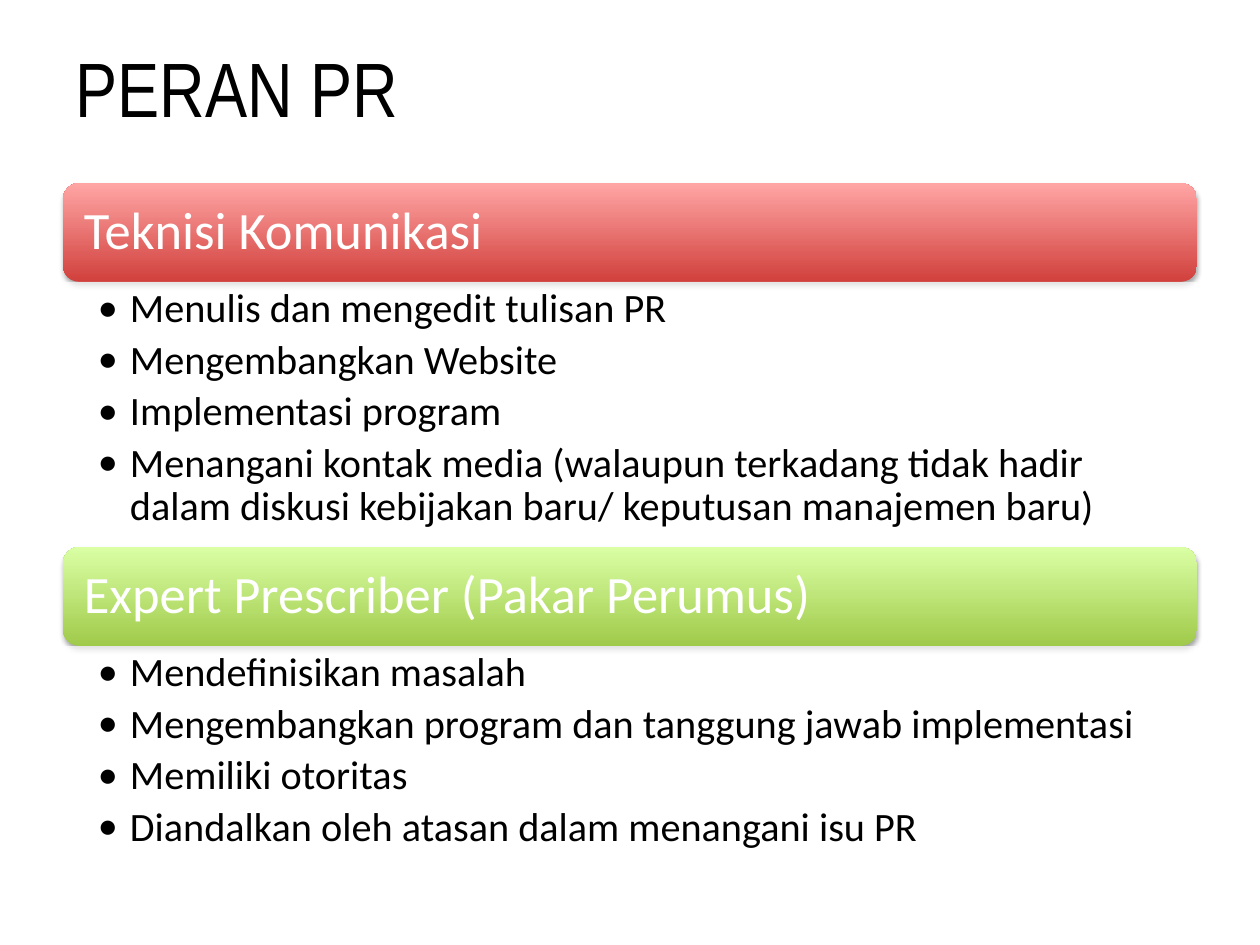
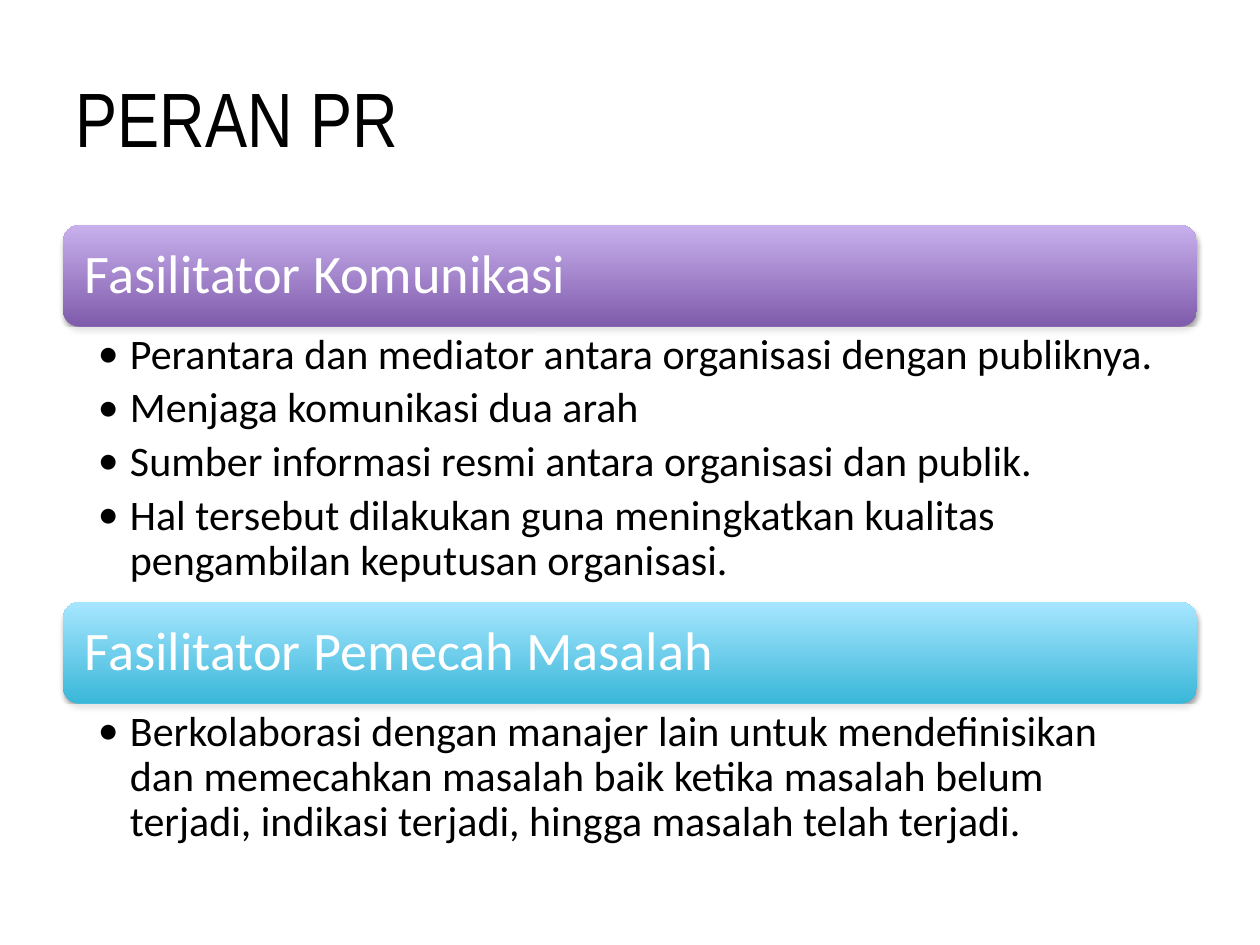
from dataclasses import dataclass

import pptx
import pptx.dml.color
import pptx.enum.shapes
import pptx.enum.text
import pptx.oxml
import pptx.oxml.ns
import pptx.util

PX_PER_INCH = 126
LEFT, WIDTH = 63, 1134
TITLE_HEIGHT = 158
HANGING_INDENT = 32


@dataclass(frozen=True)
class Theme:
    title_font: str = "Arial Narrow"
    body_font: str = "Calibri"
    title_size: int = 44
    text: str = "000000"
    heading_text: str = "FFFFFF"
    panel: str = "FFFFFF"
    red: tuple = ("D1403C", "FFA6A5")
    green: tuple = ("A0CA4A", "DAFFA5")
    purple: tuple = ("7F5BAB", "C8B0ED")
    cyan: tuple = ("39B7D8", "A7E6FF")
    line_spacing: float = 0.9
    bullet_gap: float = 0.2


THEME = Theme()


@dataclass(frozen=True)
class ListStyle:
    """Sizes of the headings and bullet lists on one slide."""
    heading_size: int
    bullet_size: int
    heading_height: int
    heading_inset: int
    bullet_right_inset: int


@dataclass(frozen=True)
class Role:
    name: str
    gradient: tuple
    list_height: int
    duties: tuple


def px(length):
    return pptx.util.Emu(round(length * 914400 / PX_PER_INCH))


def rgb(colour):
    return pptx.dml.color.RGBColor.from_string(colour)


def xml(markup):
    """Parse one element, given as markup with a {ns} slot for its namespace."""
    return pptx.oxml.parse_xml(markup.format(ns=pptx.oxml.ns.nsdecls("a")))


def place(shape, left, top, width, height):
    shape.left, shape.top = px(left), px(top)
    shape.width, shape.height = px(width), px(height)


def add_block(slide, preset, top, height, text, insets, anchor):
    """Add a full-width shape without outline that holds wrapped text."""
    block = slide.shapes.add_shape(preset, px(LEFT), px(top), px(WIDTH), px(height))
    block.line.fill.background()
    text_frame = block.text_frame
    text_frame.text = text
    text_frame.word_wrap = True
    text_frame.vertical_anchor = anchor
    left, upper, right, lower = map(px, insets)
    text_frame.margin_left, text_frame.margin_top = left, upper
    text_frame.margin_right, text_frame.margin_bottom = right, lower
    for paragraph in text_frame.paragraphs:
        paragraph.alignment = pptx.enum.text.PP_ALIGN.LEFT
        paragraph.line_spacing = THEME.line_spacing
    return block


def format_runs(paragraph, font_name, size, colour):
    for run in paragraph.runs:
        run.font.name = font_name
        run.font.size = pptx.util.Pt(size)
        run.font.color.rgb = rgb(colour)


def set_title(slide, text, top):
    title = slide.shapes.title
    place(title, LEFT, top, WIDTH, TITLE_HEIGHT)
    text_frame = title.text_frame
    text_frame.text = text
    text_frame.auto_size = pptx.enum.text.MSO_AUTO_SIZE.NONE
    text_frame.vertical_anchor = pptx.enum.text.MSO_ANCHOR.MIDDLE
    paragraph = text_frame.paragraphs[0]
    paragraph.alignment = pptx.enum.text.PP_ALIGN.LEFT
    format_runs(paragraph, THEME.title_font, THEME.title_size, THEME.text)


def add_soft_shadow(shape):
    shape._element.spPr.append(xml(
        '<a:effectLst {ns}>'
        '<a:outerShdw blurRad="40000" dist="23000" dir="5400000" rotWithShape="0">'
        '<a:srgbClr val="000000"><a:alpha val="35000"/></a:srgbClr>'
        '</a:outerShdw></a:effectLst>'))


def add_heading(slide, role, top, style):
    bar = add_block(slide, pptx.enum.shapes.MSO_SHAPE.ROUNDED_RECTANGLE,
                    top, style.heading_height, role.name,
                    [style.heading_inset] * 4, pptx.enum.text.MSO_ANCHOR.MIDDLE)
    bar.fill.gradient()
    bar.fill.gradient_angle = 90
    for stop, colour in zip(bar.fill.gradient_stops, role.gradient):
        stop.color.rgb = rgb(colour)
    add_soft_shadow(bar)
    format_runs(bar.text_frame.paragraphs[0], THEME.body_font,
                style.heading_size, THEME.heading_text)


def add_bullet(paragraph):
    properties = paragraph._p.get_or_add_pPr()
    properties.set("marL", str(px(HANGING_INDENT)))
    properties.set("indent", str(px(-HANGING_INDENT)))
    properties.append(xml(f'<a:buFont {{ns}} typeface="{THEME.body_font}"/>'))
    properties.append(xml('<a:buChar {ns} char="•"/>'))


def add_duties(slide, role, top, style):
    panel = add_block(slide, pptx.enum.shapes.MSO_SHAPE.RECTANGLE,
                      top, role.list_height, "\n".join(role.duties),
                      (35, 6, style.bullet_right_inset, 5),
                      pptx.enum.text.MSO_ANCHOR.TOP)
    panel.shadow.inherit = False
    panel.fill.solid()
    panel.fill.fore_color.rgb = rgb(THEME.panel)
    fill_colour = panel._element.spPr.find(pptx.oxml.ns.qn("a:solidFill"))[0]
    fill_colour.append(xml('<a:alpha {ns} val="70000"/>'))
    for paragraph in panel.text_frame.paragraphs:
        paragraph.level = 1
        add_bullet(paragraph)
        paragraph.space_after = pptx.util.Pt(THEME.bullet_gap * style.bullet_size)
        format_runs(paragraph, THEME.body_font, style.bullet_size, THEME.text)


def add_roles_slide(presentation, title_top, roles_top, style, roles):
    """Stack each role's heading and duties below the title."""
    slide = presentation.slides.add_slide(
        presentation.slide_layouts.get_by_name("Title Only"))
    set_title(slide, "PERAN PR", title_top)
    top = roles_top
    for role in roles:
        add_heading(slide, role, top, style)
        top += style.heading_height
        add_duties(slide, role, top, style)
        top += role.list_height


def main():
    presentation = pptx.Presentation()
    presentation.slide_width = pptx.util.Inches(10)
    presentation.slide_height = pptx.util.Inches(7.5)

    add_roles_slide(presentation, 8, 183, ListStyle(30, 23, 99, 16, 29), [
        Role("Teknisi Komunikasi", THEME.red, 265, (
            "Menulis dan mengedit tulisan PR",
            "Mengembangkan Website",
            "Implementasi program",
            "Menangani kontak media (walaupun terkadang tidak hadir "
            "dalam diskusi kebijakan baru/ keputusan manajemen baru)",
        )),
        Role("Expert Prescriber (Pakar Perumus)", THEME.green, 218, (
            "Mendefinisikan masalah",
            "Mengembangkan program dan tanggung jawab implementasi",
            "Memiliki otoritas",
            "Diandalkan oleh atasan dalam menangani isu PR",
        )),
    ])
    add_roles_slide(presentation, 38, 225, ListStyle(31, 24, 102, 17, 30), [
        Role("Fasilitator Komunikasi", THEME.purple, 275, (
            "Perantara dan mediator antara organisasi dengan publiknya.",
            "Menjaga komunikasi dua arah",
            "Sumber informasi resmi antara organisasi dan publik.",
            "Hal tersebut dilakukan guna meningkatkan kualitas "
            "pengambilan keputusan organisasi.",
        )),
        Role("Fasilitator Pemecah Masalah", THEME.cyan, 150, (
            "Berkolaborasi dengan manajer lain untuk mendefinisikan "
            "dan memecahkan masalah baik ketika masalah belum "
            "terjadi, indikasi terjadi, hingga masalah telah terjadi.",
        )),
    ])
    presentation.save("out.pptx")


if __name__ == "__main__":
    main()
